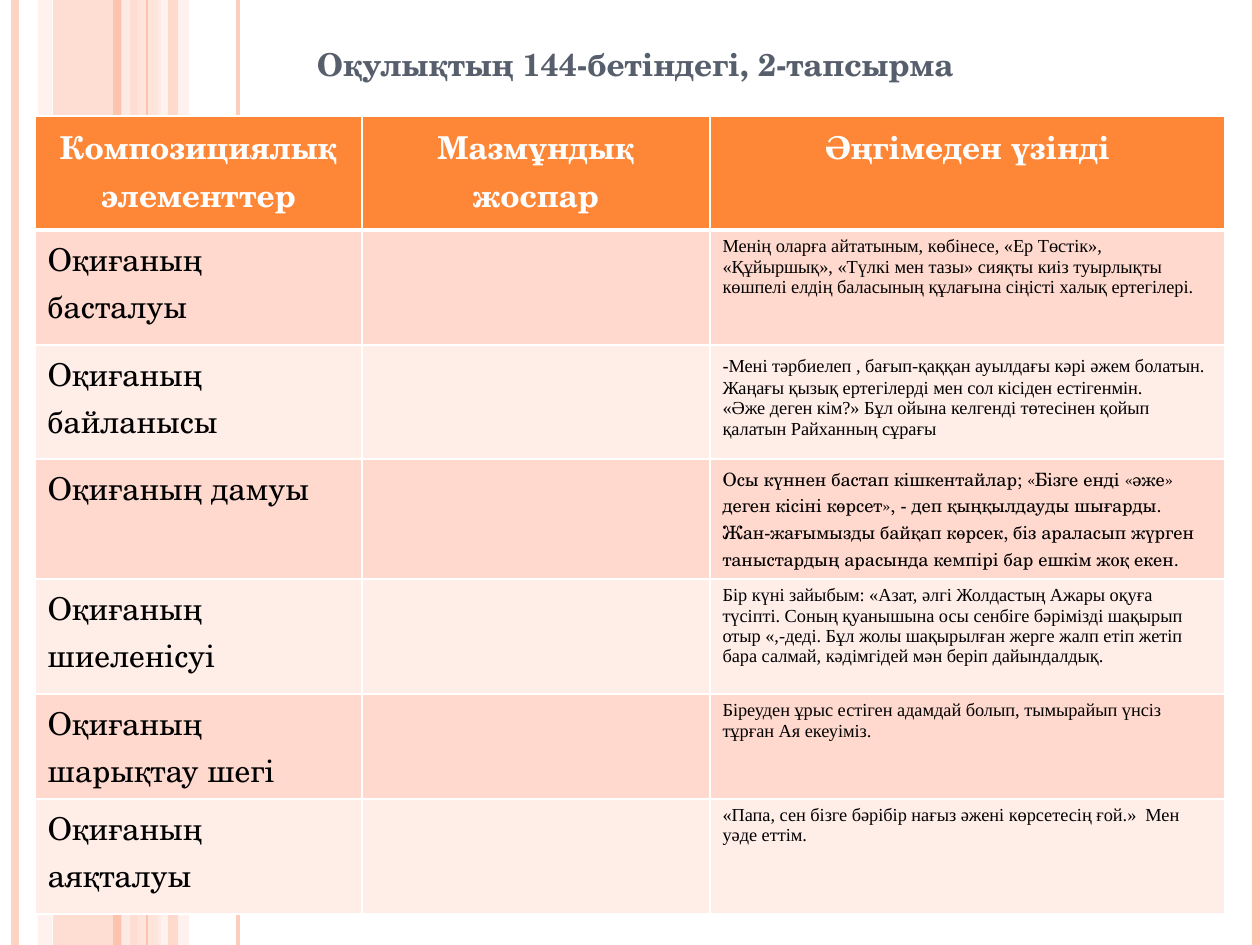
"""Build the slide with the table of story composition elements."""
from lxml import etree
from pptx import Presentation
from pptx import util as u
from pptx.dml.color import RGBColor
from pptx.enum import shapes, text
from pptx.oxml.ns import qn

SCHOLA, TIMES = "TeX Gyre Schola", "Times New Roman"
COLORS = {
    "orange": "FE8637", "salmon": "FEC3AE", "peach": "FFD9CE", "blush": "FFEDE8",
    "slate": "575F6D", "white": "FFFFFF", "black": "000000",
}
SLIDE_W, SLIDE_H = 1260, 945
TITLE = "Оқулықтың 144-бетіндегі, 2-тапсырма"
TITLE_BOX = (105, 45, 1061, 833)
BANDS_BACK = [
    (53, 84, "salmon", 54), (38, 14, "peach", 36),
    (136, 25, "peach", 70), (158, 31, "blush", 71),
]
STRIPES = [
    (15, "salmon", 4.5, 73), (126, "blush", 4.5, 83), (117, "salmon", 4.5, 100),
    (238, "salmon", 2.25, 82), (147, "salmon", 0.75, 100), (1256, "salmon", 4.5, 100),
]
BANDS_FRONT = [(168, 10, "salmon", 51)]

TABLE_LEFT, TABLE_TOP = 35, 116
COLUMN_WIDTHS = [327, 348, 515]
ROW_HEIGHTS = [114, 115, 114, 120, 115, 105, 115]
HEADINGS = ["Композициялық элементтер", "Мазмұндық жоспар", "Әңгімеден үзінді"]
STAGES = [
    ("Оқиғаның басталуы", [[(
        "Менің оларға айтатыным, көбінесе, «Ер Төстік», «Құйыршық», «Түлкі мен тазы» "
        "сияқты киіз туырлықты көшпелі елдің баласының құлағына сіңісті халық ертегілері.",
        TIMES)]]),
    ("Оқиғаның байланысы", [
        [("-", SCHOLA), (
            "Мені тәрбиелеп , бағып-қаққан ауылдағы кәрі әжем болатын. "
            "Жаңағы қызық ертегілерді мен сол кісіден естігенмін.", TIMES)],
        [("«Әже деген кім?» Бұл ойына келгенді төтесінен қойып қалатын Райханның сұрағы",
          TIMES)]]),
    ("Оқиғаның дамуы", [[(
        "Осы күннен бастап кішкентайлар; «Бізге енді «әже» деген кісіні көрсет», - деп "
        "қыңқылдауды шығарды. Жан-жағымызды байқап көрсек, біз араласып жүрген "
        "таныстардың арасында кемпірі бар ешкім жоқ екен.", SCHOLA)]]),
    ("Оқиғаның шиеленісуі", [[(
        "Бір күні зайыбым: «Азат, әлгі Жолдастың Ажары оқуға түсіпті. Соның қуанышына "
        "осы сенбіге бәрімізді шақырып отыр «,-деді. Бұл жолы шақырылған жерге жалп етіп "
        "жетіп бара салмай, кәдімгідей мән беріп дайындалдық.", TIMES)]]),
    ("Оқиғаның шарықтау шегі", [[(
        "Біреуден ұрыс естіген адамдай болып, тымырайып үнсіз тұрған Ая екеуіміз.",
        TIMES)]]),
    ("Оқиғаның аяқталуы", [[(
        "«Папа, сен бізге бәрібір нағыз әжені көрсетесің ғой.»  Мен уәде еттім.",
        TIMES)]]),
]


def px(n):
    return round(n * 914400 / 126)


def rgb(name):
    return RGBColor.from_string(COLORS[name])


def set_opacity(fill, percent):
    color = next(fill._xPr.iter(qn("a:srgbClr")))
    etree.SubElement(color, qn("a:alpha"), val=str(percent * 1000))


def add_bands(slide, bands):
    for left, width, color, opacity in bands:
        band = slide.shapes.add_shape(
            shapes.MSO_SHAPE.RECTANGLE, px(left), 0, px(width), px(SLIDE_H))
        band.shadow.inherit = False
        band.fill.solid()
        band.fill.fore_color.rgb = rgb(color)
        set_opacity(band.fill, opacity)
        band.line.fill.background()


def add_stripes(slide):
    for x, color, weight, opacity in STRIPES:
        stripe = slide.shapes.add_connector(
            shapes.MSO_CONNECTOR.STRAIGHT, px(x), 0, px(x), px(SLIDE_H))
        stripe.line.width = u.Pt(weight)
        stripe.line.color.rgb = rgb(color)
        set_opacity(stripe.line.fill, opacity)
        etree.SubElement(stripe._element.spPr, qn("a:effectLst"))


def write(frame, paragraphs, size, color, bold=False, align=text.PP_ALIGN.LEFT):
    for i, runs in enumerate(paragraphs):
        paragraph = frame.add_paragraph() if i else frame.paragraphs[0]
        paragraph.alignment = align
        font = paragraph.font
        font.size, font.bold, font.color.rgb = u.Pt(size), bold, rgb(color)
        same_face = len({face for _, face in runs}) == 1
        if same_face:
            font.name = runs[0][1]
        for words, face in runs:
            run = paragraph.add_run()
            run.text = words
            if not same_face:
                run.font.name = face


def style_cell(cell, color, bottom_weight):
    weights = {"a:lnL": 1, "a:lnR": 1, "a:lnT": 1, "a:lnB": bottom_weight}
    properties = cell._tc.get_or_add_tcPr()
    for tag, weight in weights.items():
        border = etree.SubElement(properties, qn(tag), w=str(u.Pt(weight)))
        solid = etree.SubElement(border, qn("a:solidFill"))
        etree.SubElement(solid, qn("a:srgbClr"), val=COLORS["white"])
    cell.fill.solid()
    cell.fill.fore_color.rgb = rgb(color)


def add_title(slide):
    frame = slide.shapes.add_textbox(*map(px, TITLE_BOX)).text_frame
    frame.word_wrap = True
    frame.margin_top = 0
    write(frame, [[(TITLE, SCHOLA)]], 18, "slate", True, text.PP_ALIGN.CENTER)


def add_stage_table(slide):
    table = slide.shapes.add_table(
        len(ROW_HEIGHTS), len(COLUMN_WIDTHS), px(TABLE_LEFT), px(TABLE_TOP),
        px(sum(COLUMN_WIDTHS)), px(sum(ROW_HEIGHTS))).table
    for column, width in zip(table.columns, COLUMN_WIDTHS):
        column.width = px(width)
    for i, (row, height) in enumerate(zip(table.rows, ROW_HEIGHTS)):
        row.height = px(height)
        color = "orange" if i == 0 else ("blush", "peach")[i % 2]
        for cell in row.cells:
            style_cell(cell, color, 1 if i else 3)
    for column, heading in enumerate(HEADINGS):
        write(table.cell(0, column).text_frame, [[(heading, SCHOLA)]],
              18, "white", True, text.PP_ALIGN.CENTER)
    for row, (stage, excerpt) in enumerate(STAGES, 1):
        write(table.cell(row, 0).text_frame, [[(stage, SCHOLA)]], 18, "black")
        write(table.cell(row, 2).text_frame, excerpt, 10.5, "black")


def main():
    deck = Presentation()
    deck.slide_width, deck.slide_height = px(SLIDE_W), px(SLIDE_H)
    slide = deck.slides.add_slide(deck.slide_layouts[6])
    add_bands(slide, BANDS_BACK)
    add_stripes(slide)
    add_bands(slide, BANDS_FRONT)
    add_title(slide)
    add_stage_table(slide)
    deck.save("out.pptx")


if __name__ == "__main__":
    main()
